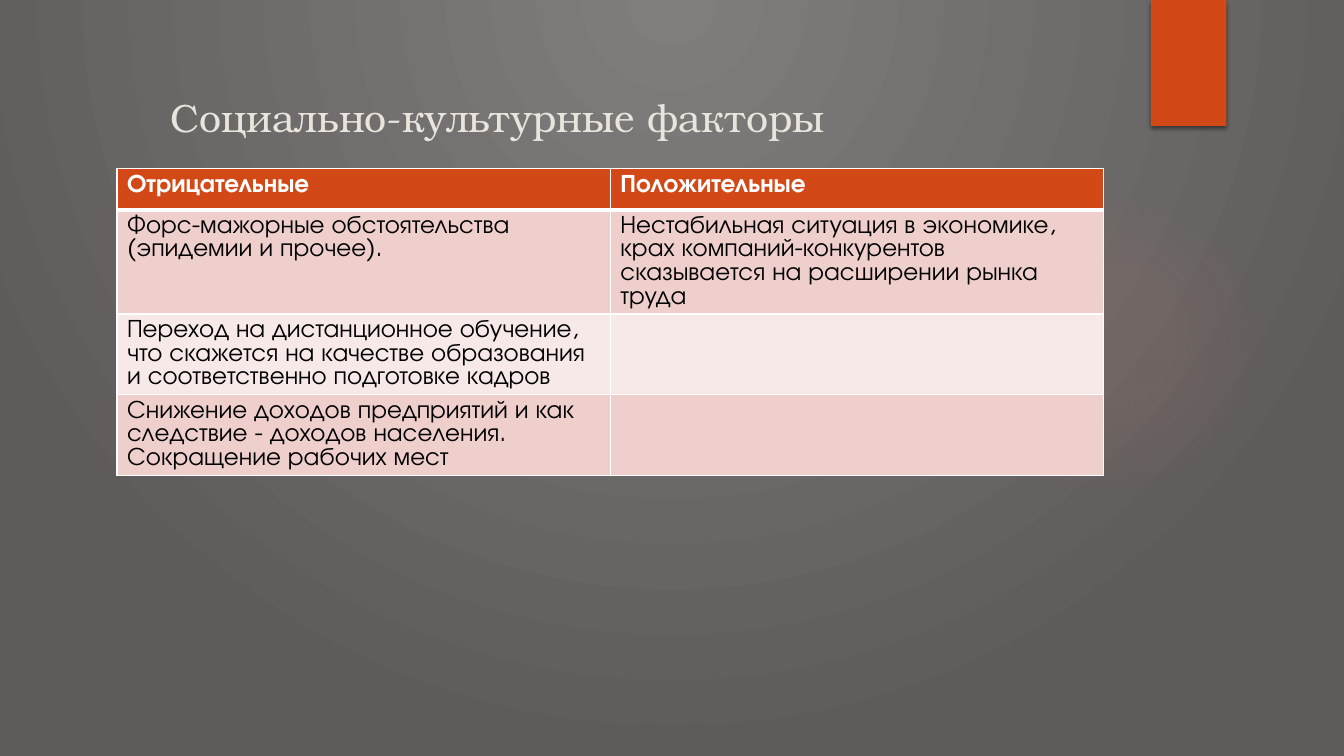
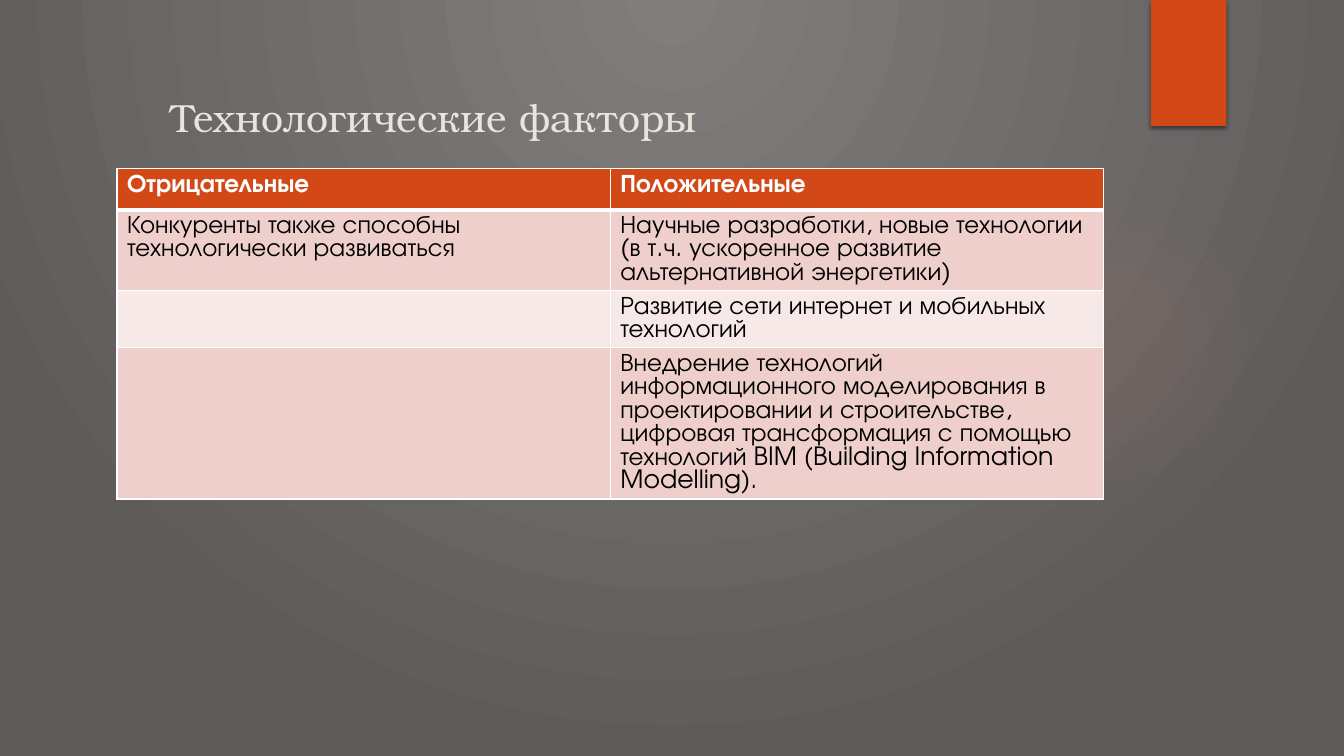
"""Build two slides that compare negative and positive market factors."""
from dataclasses import dataclass

from lxml.etree import SubElement
from pptx import Presentation
from pptx.dml.color import RGBColor
from pptx.enum.shapes import MSO_SHAPE
from pptx.oxml import parse_xml
from pptx.oxml.ns import nsdecls, qn
from pptx.oxml.xmlchemy import BaseOxmlElement
from pptx.presentation import Presentation as Deck
from pptx.shapes.autoshape import Shape
from pptx.slide import Slide
from pptx.table import _Cell
from pptx.text.text import TextFrame
from pptx.util import Pt

COLORS = {
    "center": "807D7D",
    "edge": "5F5B5B",
    "glow": "EF8C6A",
    "accent": "D34817",
    "title": "E9E5DC",
    "white": "FFFFFF",
    "black": "000000",
    "odd_row": "EFCFCC",
    "even_row": "F7E9E8",
}
TITLE_FONT = "TeX Gyre Bonum"
BODY_FONT = "TeX Gyre Adventor"
HEADINGS = ("Отрицательные", "Положительные")
COLUMN_WIDTH = 352.4
ROW_HEIGHT = 29.2
LINE_PITCH = 16.8


@dataclass(frozen=True)
class Stop:
    """One gradient stop, with position and opacity in percent."""

    position: int
    color: str
    opacity: int = 100


@dataclass(frozen=True)
class FactorSlide:
    """A title and its rows of negative and positive factors."""

    title: str
    rows: tuple[tuple[str, str], ...]


FACTOR_SLIDES = (
    FactorSlide(
        "Социально-культурные факторы",
        (
            (
                "Форс-мажорные обстоятельства (эпидемии и прочее).",
                "Нестабильная ситуация в экономике, крах компаний-конкурентов "
                "сказывается на расширении рынка труда",
            ),
            (
                "Переход на дистанционное обучение, что скажется на качестве "
                "образования и соответственно подготовке кадров",
                "",
            ),
            (
                "Снижение доходов предприятий и как следствие - доходов населения. "
                "Сокращение рабочих мест",
                "",
            ),
        ),
    ),
    FactorSlide(
        "Технологические факторы",
        (
            (
                "Конкуренты также способны технологически развиваться",
                "Научные разработки, новые технологии (в т.ч. ускоренное развитие "
                "альтернативной энергетики)",
            ),
            ("", "Развитие сети интернет и мобильных технологий"),
            (
                "",
                "Внедрение технологий информационного моделирования в проектировании "
                "и строительстве, цифровая трансформация с помощью технологий BIM "
                "(Building Information Modelling).",
            ),
        ),
    ),
)


def rgb(name: str) -> RGBColor:
    """Return a palette colour."""
    return RGBColor.from_string(COLORS[name])


def write_text(frame: TextFrame, text: str, *, font: str, size: float, color: str,
               bold: bool = False, pitch: float | None = None) -> None:
    """Write one formatted paragraph into a text frame."""
    frame.word_wrap = True
    paragraph = frame.paragraphs[0]
    if pitch:
        paragraph.line_spacing = Pt(pitch)
    if not text:
        paragraph.font.size = Pt(size)
        return
    run = paragraph.add_run()
    run.text = text
    run.font.name = font
    run.font.size = Pt(size)
    run.font.bold = bold
    run.font.color.rgb = rgb(color)


def apply_radial_fill(parent: BaseOxmlElement, stops: tuple[Stop, ...],
                      focus: tuple[int, int, int, int]) -> None:
    """Replace a solid fill by a circular gradient around the focus insets."""
    stop_xml = "".join(
        f'<a:gs pos="{stop.position * 1000}"><a:srgbClr val="{COLORS[stop.color]}">'
        f'<a:alpha val="{stop.opacity * 1000}"/></a:srgbClr></a:gs>'
        for stop in stops
    )
    left, top, right, bottom = (inset * 1000 for inset in focus)
    gradient = parse_xml(
        f'<a:gradFill {nsdecls("a")} rotWithShape="1"><a:gsLst>{stop_xml}</a:gsLst>'
        f'<a:path path="circle"><a:fillToRect l="{left}" t="{top}" r="{right}" '
        f'b="{bottom}"/></a:path></a:gradFill>'
    )
    parent.replace(parent.find(qn("a:solidFill")), gradient)


def set_background(deck: Deck) -> None:
    """Give the slide master its radial background."""
    master = deck.slide_master
    master.background.fill.solid()
    properties = next(master.element.iter(qn("p:bgPr")))
    apply_radial_fill(properties, (Stop(0, "center"), Stop(100, "edge")),
                      (43, 0, 43, 100))


def add_plain_shape(slide: Slide, kind: MSO_SHAPE, left: float, top: float,
                    width: float, height: float, color: str) -> Shape:
    """Add a filled shape with neither outline nor shadow."""
    shape = slide.shapes.add_shape(kind, Pt(left), Pt(top), Pt(width), Pt(height))
    shape.shadow.inherit = False
    shape.line.fill.background()
    shape.fill.solid()
    shape.fill.fore_color.rgb = rgb(color)
    return shape


def add_decor(slide: Slide) -> None:
    """Add the soft glow and the ribbon at the top right."""
    glow = add_plain_shape(slide, MSO_SHAPE.OVAL, 677.5, 131.8, 221.8, 221.8, "glow")
    apply_radial_fill(
        glow.element.spPr,
        (Stop(0, "glow", 7), Stop(36, "glow", 6), Stop(69, "glow", 0)),
        (50, 50, 50, 50),
    )
    ribbon = add_plain_shape(slide, MSO_SHAPE.RECTANGLE, 822, 0, 54, 90, "accent")
    shadow = SubElement(
        ribbon.element.spPr.find(qn("a:effectLst")), qn("a:outerShdw"),
        blurRad=str(Pt(3)), dist=str(Pt(2)), dir="5400000", rotWithShape="0",
    )
    shade = SubElement(shadow, qn("a:srgbClr"), val=COLORS["black"])
    SubElement(shade, qn("a:alpha"), val="45000")


def set_borders(cell: _Cell, **widths: float) -> None:
    """Draw white cell borders, one point wide unless a side says otherwise."""
    properties = cell._tc.get_or_add_tcPr()
    for index, side in enumerate(("lnL", "lnR", "lnT", "lnB")):
        border = parse_xml(
            f'<a:{side} {nsdecls("a")} w="{Pt(widths.get(side, 1))}"><a:solidFill>'
            f'<a:srgbClr val="{COLORS["white"]}"/></a:solidFill></a:{side}>'
        )
        properties.insert(index, border)


def add_factor_table(slide: Slide, rows: tuple[tuple[str, str], ...]) -> None:
    """Add the two-column table of factors under its heading row."""
    lines = (HEADINGS, *rows)
    table = slide.shapes.add_table(
        len(lines), len(HEADINGS), Pt(83.6), Pt(120.6),
        Pt(COLUMN_WIDTH * len(HEADINGS)), Pt(ROW_HEIGHT * len(lines)),
    ).table
    for column in table.columns:
        column.width = Pt(COLUMN_WIDTH)
    for row_index, texts in enumerate(lines):
        table.rows[row_index].height = Pt(ROW_HEIGHT)
        heading = row_index == 0
        fill = "accent" if heading else "odd_row" if row_index % 2 else "even_row"
        rule = {0: {"lnB": 3}, 1: {"lnT": 3}}.get(row_index, {})
        for column_index, text in enumerate(texts):
            cell = table.cell(row_index, column_index)
            cell.fill.solid()
            cell.fill.fore_color.rgb = rgb(fill)
            set_borders(cell, **rule)
            write_text(cell.text_frame, text, font=BODY_FONT, size=18,
                       color="white" if heading else "black", bold=heading,
                       pitch=LINE_PITCH)


def add_factor_slide(deck: Deck, content: FactorSlide) -> None:
    """Add one complete slide."""
    slide = deck.slides.add_slide(deck.slide_layouts[6])
    add_decor(slide)
    title = slide.shapes.add_textbox(Pt(114.5), Pt(63.4), Pt(674), Pt(57.6))
    write_text(title.text_frame, content.title, font=TITLE_FONT, size=28, color="title")
    add_factor_table(slide, content.rows)


def main() -> None:
    """Build and save the presentation."""
    deck = Presentation()
    deck.slide_width, deck.slide_height = Pt(960), Pt(540)
    set_background(deck)
    for content in FACTOR_SLIDES:
        add_factor_slide(deck, content)
    deck.save("out.pptx")


if __name__ == "__main__":
    main()
